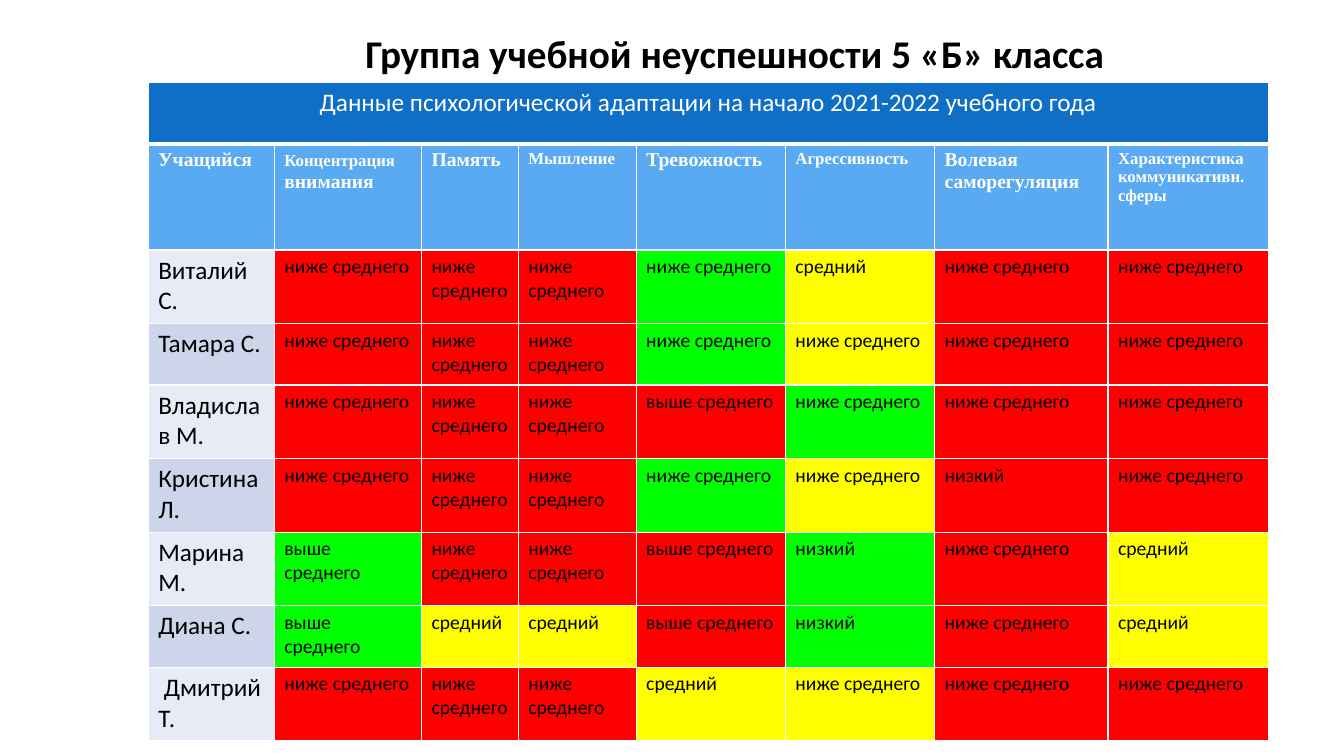
from lxml import etree
from pptx import Presentation
from pptx.dml.color import RGBColor
from pptx.enum.text import MSO_ANCHOR, MSO_AUTO_SIZE, PP_ALIGN
from pptx.oxml.ns import qn
from pptx.util import Inches, Pt

SLIDE_SIZE = (13.33, 7.5)
TITLE_BOX = (2.41, 0.2, 9.75, 0.71)
TABLE_CORNER = (1.47, 0.82)
COLUMN_WIDTHS = [1.25, 1.46, 0.96, 1.17, 1.48, 1.48, 1.72, 1.59]
BANNER_HEIGHT, HEADING_HEIGHT = 0.61, 1.05
ONE_LINE_NAME, TWO_LINE_NAME = 0.61, 0.73

WHITE, BLACK = "FFFFFF", "000000"
BANNER_FILL, HEADING_FILL = "0F6FC6", "59AAF2"
NAME_BANDS = ("E7EBF5", "CCD5EA")

TITLE_FONT = dict(name="Calibri", size=Pt(28), bold=True)
BANNER_FONT = dict(name="Calibri", size=Pt(18), bold=False)
NAME_FONT = BANNER_FONT
LEVEL_FONT = dict(name="Calibri", size=Pt(14), bold=False)
HEADING_FONT = dict(name="Times New Roman", size=Pt(14), bold=True)
SMALL_HEADING_FONT = {**HEADING_FONT, "size": Pt(12)}

TITLE = "Группа учебной неуспешности 5 «Б» класса"
BANNER = "Данные психологической адаптации на начало 2021-2022 учебного года"
HEADINGS = [
    [("Учащийся", HEADING_FONT)],
    [("Концентрация", SMALL_HEADING_FONT), (" внимания", HEADING_FONT)],
    [("Память", HEADING_FONT)],
    [("Мышление", SMALL_HEADING_FONT)],
    [("Тревожность", HEADING_FONT)],
    [("Агрессивность", SMALL_HEADING_FONT)],
    [("Волевая саморегуляция", HEADING_FONT)],
    [("Характеристика коммуникативн. сферы", SMALL_HEADING_FONT)],
]

# Each result is a level letter followed by a colour letter
LEVELS = {"Н": "ниже среднего", "В": "выше среднего", "с": "средний", "н": "низкий"}
SIGNALS = {"R": "FF0000", "G": "00FF00", "Y": "FFFF00"}
PUPILS = [
    ("Виталий С.", TWO_LINE_NAME, "НR НR НR НG сY НR НR"),
    ("Тамара С.", ONE_LINE_NAME, "НR НR НR НG НY НR НR"),
    ("Владислав М.", TWO_LINE_NAME, "НR НR НR ВR НG НR НR"),
    ("Кристина Л.", TWO_LINE_NAME, "НR НR НR НG НY нR НR"),
    ("Марина М.", TWO_LINE_NAME, "ВG НR НR ВR нG НR сY"),
    ("Диана С.", ONE_LINE_NAME, "ВG сY сY ВR нG НR сY"),
    (" Дмитрий Т.", TWO_LINE_NAME, "НR НR НR сY НY НR НR"),
]


def paint(color_format, hex_color):
    color_format.rgb = RGBColor.from_string(hex_color)


def write(paragraph, pieces, color):
    for text, font_values in pieces:
        run = paragraph.add_run()
        run.text = text
        for attribute, value in font_values.items():
            setattr(run.font, attribute, value)
        paint(run.font.color, color)


def add_borders(cell, bottom_width=1):
    properties = cell._tc.get_or_add_tcPr()
    for side in "LRTB":
        width = bottom_width if side == "B" else 1
        line = etree.SubElement(properties, qn(f"a:ln{side}"), w=str(Pt(width)))
        fill = etree.SubElement(line, qn("a:solidFill"))
        etree.SubElement(fill, qn("a:srgbClr"), val=WHITE)


def fill_cell(cell, pieces, fill, color=BLACK, bottom_width=1):
    add_borders(cell, bottom_width)
    cell.fill.solid()
    paint(cell.fill.fore_color, fill)
    write(cell.text_frame.paragraphs[0], pieces, color)


def add_title(slide):
    title = slide.shapes.title
    title.left, title.top, title.width, title.height = map(Inches, TITLE_BOX)
    frame = title.text_frame
    frame.auto_size = MSO_AUTO_SIZE.NONE
    frame.vertical_anchor = MSO_ANCHOR.MIDDLE
    heading = frame.paragraphs[0]
    heading.alignment = PP_ALIGN.CENTER
    heading.line_spacing = 0.9
    write(heading, [(TITLE, TITLE_FONT)], BLACK)


def add_results(slide):
    heights = [BANNER_HEIGHT, HEADING_HEIGHT] + [height for _, height, _ in PUPILS]
    table = slide.shapes.add_table(
        len(heights), len(COLUMN_WIDTHS), *map(Inches, TABLE_CORNER),
        Inches(sum(COLUMN_WIDTHS)), Inches(sum(heights))).table
    for column, width in zip(table.columns, COLUMN_WIDTHS):
        column.width = Inches(width)
    for row, height in zip(table.rows, heights):
        row.height = Inches(height)

    # Banner across all columns
    banner = table.cell(0, 0)
    banner.merge(table.cell(0, len(COLUMN_WIDTHS) - 1))
    for index, cell in enumerate(table.rows[0].cells):
        pieces = [(BANNER, BANNER_FONT)] if index == 0 else []
        fill_cell(cell, pieces, BANNER_FILL, WHITE, bottom_width=3)
    banner.text_frame.paragraphs[0].alignment = PP_ALIGN.CENTER

    # Column headings
    for cell, pieces in zip(table.rows[1].cells, HEADINGS):
        fill_cell(cell, pieces, HEADING_FILL, WHITE)

    # Pupils and their results
    for index, (name, _, results) in enumerate(PUPILS):
        name_cell, *result_cells = table.rows[index + 2].cells
        fill_cell(name_cell, [(name, NAME_FONT)], NAME_BANDS[index % 2])
        for cell, (level, signal) in zip(result_cells, results.split()):
            fill_cell(cell, [(LEVELS[level], LEVEL_FONT)], SIGNALS[signal])


def main():
    presentation = Presentation()
    presentation.slide_width, presentation.slide_height = map(Inches, SLIDE_SIZE)
    slide = presentation.slides.add_slide(presentation.slide_layouts[5])
    add_title(slide)
    add_results(slide)
    presentation.save("out.pptx")


if __name__ == "__main__":
    main()
